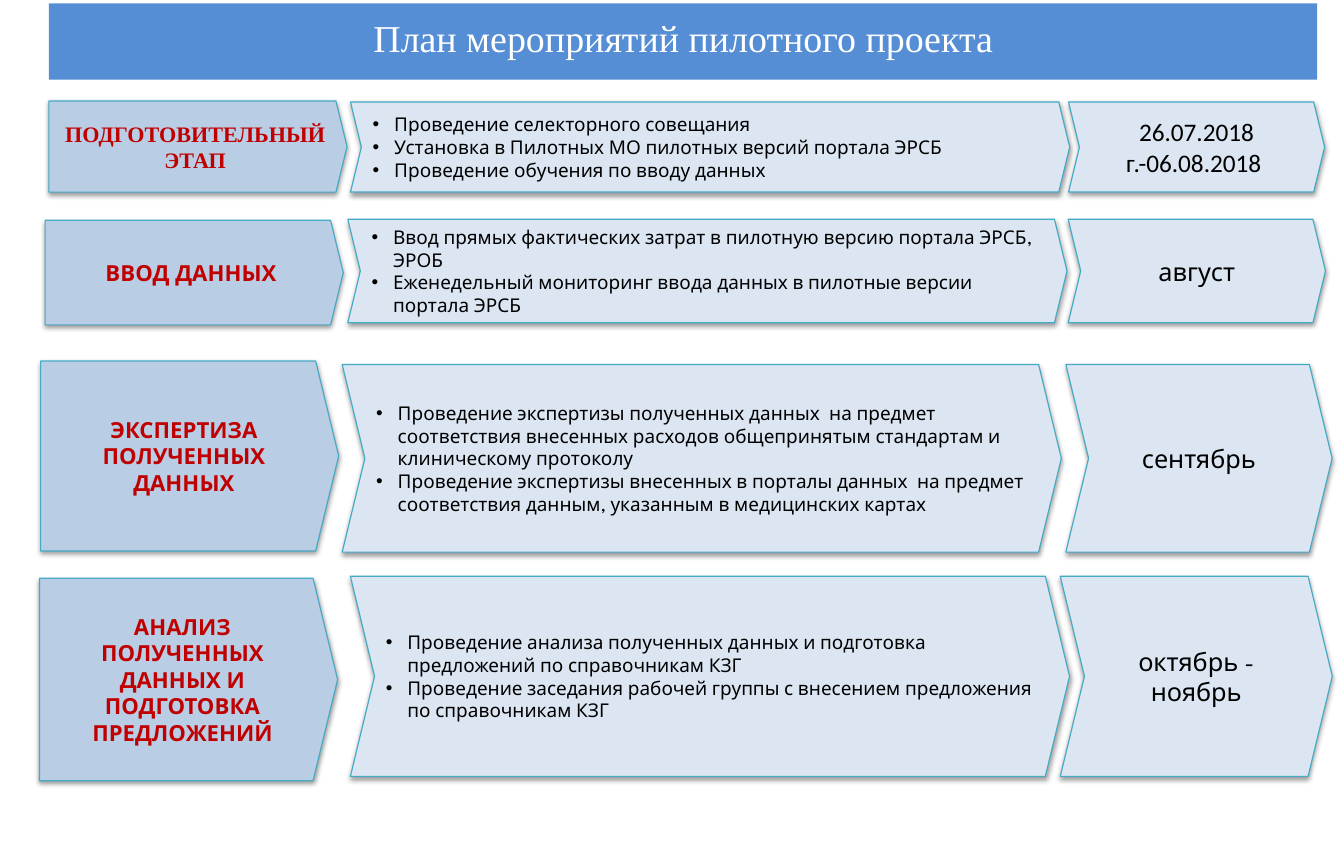
import dataclasses
import lxml.etree
import pptx
import pptx.dml.color
import pptx.enum.shapes
import pptx.enum.text
import pptx.oxml.ns
import pptx.util

SHAPES = pptx.enum.shapes.MSO_SHAPE
CENTER = pptx.enum.text.PP_ALIGN.CENTER
LEFT = pptx.enum.text.PP_ALIGN.LEFT


@dataclasses.dataclass(frozen=True)
class Theme:
    """Colours, fonts and sizes of the slide."""
    banner: str = "558ED5"
    label: str = "B9CDE5"
    panel: str = "DCE6F2"
    outline: str = "46AAC5"
    shadow: str = "000000"
    white: str = "FFFFFF"
    red: str = "C00000"
    black: str = "000000"
    serif: str = "Times New Roman"
    sans: str = "League Spartan"
    plain: str = "Calibri"
    title_size: int = 24
    label_size: int = 14
    action_size: int = 12
    date_size: int = 16


@dataclasses.dataclass(frozen=True)
class Box:
    """A rectangle in percent of the slide's width and height."""
    left: float
    top: float
    width: float
    height: float


@dataclasses.dataclass(frozen=True)
class Stage:
    """One row of the plan, with column offsets counted from its box."""
    box: Box
    label_shift: float
    label_growth: float
    action_offset: float
    date_offset: float
    label: str
    actions: tuple
    date: str
    label_font: str
    date_font: str


THEME = Theme()
SLIDE_WIDTH = pptx.util.Pt(850.5)
SLIDE_HEIGHT = pptx.util.Pt(540)
LABEL_WIDTH = 22.18
ACTION_WIDTH = 53.51
POINT = 0.121
BULLET_INDENT = pptx.util.Inches(0.19)

TITLE = "План мероприятий пилотного проекта"
TITLE_BOX = Box(3.64, 0.4, 94.37, 8.93)
STAGES = (
    Stage(Box(3.64, 11.97, 94.92, 10.55), -0.13, 0.13, 22.44, 75.87,
          "ПОДГОТОВИТЕЛЬНЫЙ ЭТАП",
          ("Проведение селекторного совещания",
           "Установка в Пилотных МО пилотных версий портала ЭРСБ",
           "Проведение обучения по вводу данных"),
          "26.07.2018 г.-06.08.2018 ", THEME.serif, THEME.plain),
    Stage(Box(3.36, 25.7, 95.26, 12.13), 0.13, 0.13, 22.52, 76.12,
          "ВВОД ДАННЫХ",
          ("Ввод прямых фактических затрат в пилотную версию портала ЭРСБ, ЭРОБ",
           "Еженедельный мониторинг ввода данных в пилотные версии портала ЭРСБ"),
          "август", THEME.sans, THEME.sans),
    Stage(Box(3.02, 42.73, 96.1, 22), -0.4, 0.27, 22.44, 76.29,
          "ЭКСПЕРТИЗА ПОЛУЧЕННЫХ ДАННЫХ",
          ("Проведение экспертизы полученных данных  на предмет соответствия "
           "внесенных расходов общепринятым стандартам и клиническому протоколу",
           "Проведение экспертизы внесенных в порталы данных  на предмет "
           "соответствия данным, указанным в медицинских картах"),
          "сентябрь", THEME.sans, THEME.sans),
    Stage(Box(2.94, 67.55, 96.19, 23.47), 0.25, 0.27, 23.13, 75.95,
          "АНАЛИЗ ПОЛУЧЕННЫХ ДАННЫХ И ПОДГОТОВКА ПРЕДЛОЖЕНИЙ",
          ("Проведение анализа полученных данных и подготовка предложений "
           "по справочникам КЗГ",
           "Проведение заседания рабочей группы с внесением предложения "
           "по справочникам КЗГ"),
          "октябрь - ноябрь", THEME.sans, THEME.sans),
)


def color(value):
    """Turn a hexadecimal string into a colour."""
    return pptx.dml.color.RGBColor.from_string(value)


def add_child(parent, tag, **attributes):
    """Append a drawing element with its attributes."""
    return lxml.etree.SubElement(parent, pptx.oxml.ns.qn(tag), attributes)


def add_block(page, kind, box, fill):
    """Place a filled shape without line or shadow."""
    block = page.shapes.add_shape(
        kind, round(SLIDE_WIDTH * box.left / 100), round(SLIDE_HEIGHT * box.top / 100),
        round(SLIDE_WIDTH * box.width / 100), round(SLIDE_HEIGHT * box.height / 100))
    block.shadow.inherit = False
    block.fill.solid()
    block.fill.fore_color.rgb = color(fill)
    block.line.fill.background()
    return block


def add_arrow(page, kind, box, fill):
    """Place an outlined arrow block with a soft shadow below it."""
    arrow = add_block(page, kind, box, fill)
    arrow.adjustments[0] = POINT
    arrow.line.color.rgb = color(THEME.outline)
    arrow.line.width = pptx.util.Pt(0.75)
    effects = arrow._element.spPr.find(pptx.oxml.ns.qn("a:effectLst"))
    shadow = add_child(effects, "a:outerShdw", blurRad="40000", dist="20000",
                       dir="5400000", rotWithShape="0")
    tint = add_child(shadow, "a:srgbClr", val=THEME.shadow)
    add_child(tint, "a:alpha", val="38000")
    return arrow


def add_bullet(para):
    """Give a paragraph a round bullet with a hanging indent."""
    properties = para._p.get_or_add_pPr()
    properties.set("marL", str(BULLET_INDENT))
    properties.set("indent", str(-BULLET_INDENT))
    add_child(properties, "a:buFont", typeface="Arial")
    add_child(properties, "a:buChar", char="•")


def write(block, lines, ink, font, align=CENTER):
    """Write paragraphs in the middle of a block and return them."""
    frame = block.text_frame
    frame.word_wrap = True
    frame.vertical_anchor = pptx.enum.text.MSO_ANCHOR.MIDDLE
    paras = []
    for index, line in enumerate(lines):
        para = frame.add_paragraph() if index else frame.paragraphs[0]
        para.alignment = align
        span = para.add_run()
        span.text = line
        span.font.color.rgb = color(ink)
        for name, value in font.items():
            setattr(span.font, name, value)
        paras.append(para)
    return paras


def add_banner(page, box):
    """Draw the title band."""
    banner = add_block(page, SHAPES.RECTANGLE, box, THEME.banner)
    font = {"name": THEME.serif, "size": pptx.util.Pt(THEME.title_size)}
    for para in write(banner, [TITLE], THEME.white, font):
        para.line_spacing = 0.8


def add_stage(page, stage):
    """Draw a stage's label, actions and date inside its row box."""
    box = stage.box
    label_box = Box(box.left, box.top + stage.label_shift,
                    LABEL_WIDTH, box.height + stage.label_growth)
    label = add_arrow(page, SHAPES.PENTAGON, label_box, THEME.label)
    write(label, [stage.label], THEME.red,
          {"name": stage.label_font, "size": pptx.util.Pt(THEME.label_size), "bold": True})

    action_box = Box(box.left + stage.action_offset, box.top, ACTION_WIDTH, box.height)
    actions = add_arrow(page, SHAPES.CHEVRON, action_box, THEME.panel)
    font = {"name": THEME.sans, "size": pptx.util.Pt(THEME.action_size)}
    for para in write(actions, stage.actions, THEME.black, font, LEFT):
        add_bullet(para)

    date_box = Box(box.left + stage.date_offset, box.top,
                   box.width - stage.date_offset, box.height)
    date = add_arrow(page, SHAPES.CHEVRON, date_box, THEME.panel)
    write(date, [stage.date], THEME.black,
          {"name": stage.date_font, "size": pptx.util.Pt(THEME.date_size)})


def main():
    """Build the plan slide and save the deck."""
    deck = pptx.Presentation()
    deck.slide_width = SLIDE_WIDTH
    deck.slide_height = SLIDE_HEIGHT
    page = deck.slides.add_slide(deck.slide_layouts[6])
    add_banner(page, TITLE_BOX)
    for stage in STAGES:
        add_stage(page, stage)
    deck.save("out.pptx")


if __name__ == "__main__":
    main()
